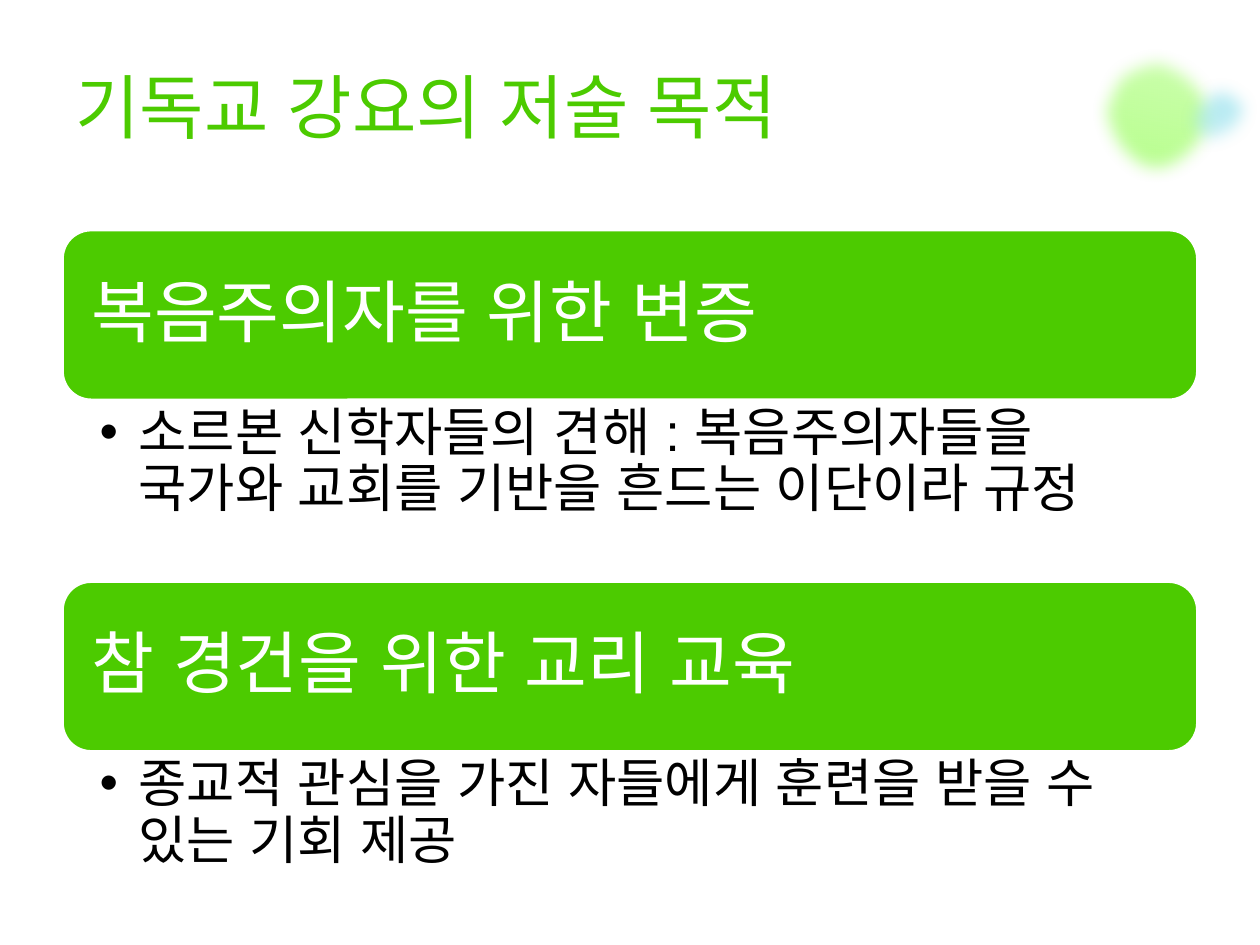
"""Builds the slide on the purposes of writing the Institutes."""
from lxml import etree
from pptx import Presentation, util as u
from pptx.dml.color import RGBColor
from pptx.enum import shapes, text
from pptx.oxml.ns import qn

COLORS = {"green": "4CCB00", "white": "FFFFFF", "black": "000000",
          "lime": "B2FF84", "aqua": "8CDFEC", "pale aqua": "B0E9F2"}
PURPOSES = [
    ("복음주의자를 위한 변증",
     "소르본 신학자들의 견해 : 복음주의자들을 국가와 교회를 기반을 흔드는 이단이라 규정"),
    ("참 경건을 위한 교리 교육",
     "종교적 관심을 가진 자들에게 훈련을 받을 수 있는 기회 제공"),
]
BLOBS = [
    (192.5, "lime", "lime", 58, [
        (9.74, 1.03), (9.71, 1.18), (9.74, 1.26), (9.49, 1.39),
        (9.36, 1.47), (9.21, 1.5), (9.06, 1.46), (8.91, 1.43), (8.78, 1.34), (8.7, 1.21),
        (8.65, 1.04), (8.59, 0.93), (8.63, 0.78), (8.66, 0.63), (8.75, 0.5), (8.88, 0.42),
        (9.06, 0.37), (9.18, 0.32), (9.31, 0.34), (9.43, 0.37), (9.55, 0.45), (9.63, 0.58),
        (9.71, 0.71), (9.78, 0.88), (9.74, 1.03)]),
    (34.8, "aqua", "pale aqua", 36, [
        (9.97, 1.05), (10.03, 0.96), (10, 0.89), (9.99, 0.82),
        (9.98, 0.75), (9.97, 0.65), (9.91, 0.6), (9.85, 0.56), (9.71, 0.54), (9.62, 0.56),
        (9.54, 0.58), (9.45, 0.63), (9.39, 0.72), (9.32, 0.81), (9.32, 0.92), (9.34, 1.01),
        (9.35, 1.09), (9.4, 1.19), (9.46, 1.24), (9.53, 1.29), (9.64, 1.31), (9.71, 1.31),
        (9.78, 1.3), (9.81, 1.29), (9.87, 1.2), (9.87, 1.2), (9.97, 1.05), (9.97, 1.05)]),
]


def rgb(name):
    return RGBColor.from_string(COLORS[name])


def write(holder, words, size, face, color, insets):
    frame = holder.text_frame
    frame.word_wrap = True
    frame.auto_size = text.MSO_AUTO_SIZE.NONE
    (frame.margin_left, frame.margin_top,
     frame.margin_right, frame.margin_bottom) = map(u.Inches, insets)
    line = frame.paragraphs[0]
    line.alignment = text.PP_ALIGN.LEFT
    line.space_before = u.Pt(0)
    run = line.add_run()
    run.text = words
    run.font.size = u.Pt(size)
    run.font.name = face
    run.font.color.rgb = rgb(color)
    latin = run.font._element.find(qn("a:latin"))
    latin.addnext(etree.Element(qn("a:ea"), typeface="Arial"))
    return line


deck = Presentation()
deck.slide_width, deck.slide_height = u.Inches(10), u.Inches(7.5)
slide = deck.slides.add_slide(deck.slide_layouts[3])
heading, *details = slide.placeholders

for layer, (angle, start, end, opacity, points) in enumerate(BLOBS):
    outline = [(u.Inches(x), u.Inches(y)) for x, y in points]
    builder = slide.shapes.build_freeform(*outline[0])
    builder.add_line_segments(outline[1:], close=True)
    blob = builder.convert_to_shape()
    segments = blob.element.spPr.findall(".//" + qn("a:lnTo"))
    for first in range(0, len(segments) - 2, 3):
        curve = etree.Element(qn("a:cubicBezTo"))
        segments[first].addprevious(curve)
        for segment in segments[first:first + 3]:
            curve.append(segment[0])
            segment.getparent().remove(segment)
    blob.rotation = angle
    blob.line.fill.background()
    blob.fill.gradient()
    blob.fill.gradient_angle = 270
    for stop, color in zip(blob.fill.gradient_stops, (start, end)):
        stop.color.rgb = rgb(color)
    faded = blob.element.spPr.findall(".//" + qn("a:srgbClr"))[-1]
    etree.SubElement(faded, qn("a:alpha"), val=str(opacity * 1000))
    blob.shadow.inherit = False
    effects = blob.element.spPr.find(qn("a:effectLst"))
    etree.SubElement(effects, qn("a:softEdge"), rad=str(u.Pt(10)))
    slide.shapes.element.insert(2 + layer, blob.element)

heading.left, heading.top = u.Inches(0.5), u.Inches(0.33)
heading.width, heading.height = u.Inches(9), u.Inches(1.01)
heading.text_frame.vertical_anchor = text.MSO_ANCHOR.MIDDLE
write(heading, "기독교 강요의 저술 목적", 40, "DejaVu Sans", "green", (0.1, 0.05, 0.1, 0.05))

for row, ((purpose, explanation), detail) in enumerate(zip(PURPOSES, details)):
    top = 1.83 + 2.79 * row
    bar = slide.shapes.add_shape(shapes.MSO_SHAPE.ROUNDED_RECTANGLE, u.Inches(0.5),
                                 u.Inches(top), u.Inches(9), u.Inches(1.34))
    bar.shadow.inherit = False
    bar.fill.solid()
    bar.fill.fore_color.rgb = rgb("green")
    bar.line.color.rgb = rgb("white")
    bar.line.width = u.Pt(1)
    bar.text_frame.vertical_anchor = text.MSO_ANCHOR.MIDDLE
    write(bar, purpose, 39, "Arial", "white", (0.16,) * 4).line_spacing = 0.9

    detail.left, detail.top = u.Inches(0.5), u.Inches(top + 1.34)
    detail.width, detail.height = u.Inches(9), u.Inches(1.46)
    item = write(detail, explanation, 30, "Arial", "black", (0.29, 0.05, 0.3, 0.05))
    item.line_spacing = 0.9
    layout = item._p.get_or_add_pPr()
    layout.set("marL", str(u.Inches(0.31)))
    layout.set("indent", str(u.Inches(-0.31)))
    etree.SubElement(layout, qn("a:buChar"), char="•")

deck.save("out.pptx")
